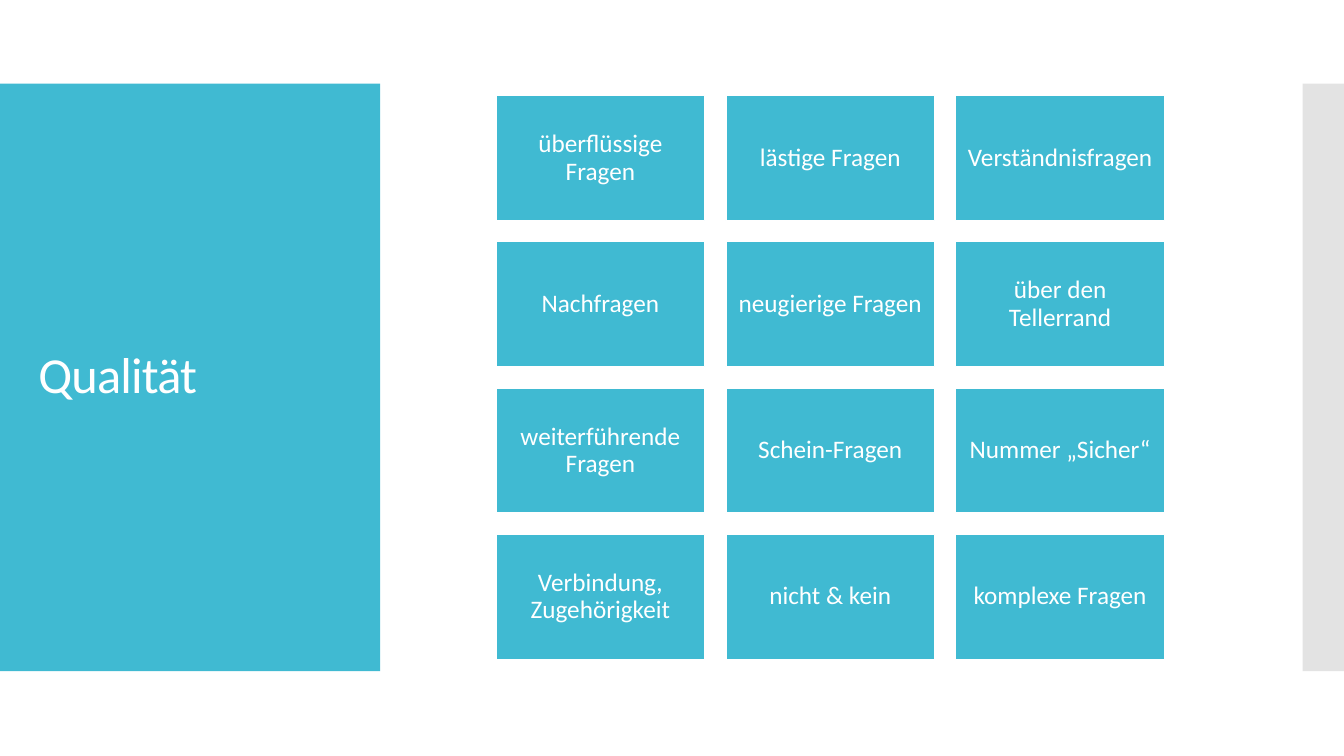
"""Build the slide "Qualität": a title panel beside a grid of question types."""
from lxml import etree
from pptx import Presentation
from pptx.dml.color import RGBColor
from pptx.enum.shapes import MSO_SHAPE
from pptx.enum.text import MSO_ANCHOR, PP_ALIGN
from pptx.oxml.ns import qn
from pptx.util import Inches, Pt

RECT = MSO_SHAPE.RECTANGLE
MIDDLE = MSO_ANCHOR.MIDDLE
LEFT, CENTER = PP_ALIGN.LEFT, PP_ALIGN.CENTER
TEAL, GREY, WHITE = "40BAD2", "C8C8C8", "FFFFFF"

ROWS = [
    ["überflüssige Fragen", "lästige Fragen", "Verständnisfragen"],
    ["Nachfragen", "neugierige Fragen", "über den Tellerrand"],
    ["weiterführende Fragen", "Schein-Fragen", "Nummer „Sicher“"],
    ["Verbindung, Zugehörigkeit", "nicht & kein", "komplexe Fragen"],
]

deck = Presentation()
deck.slide_width, deck.slide_height = Inches(13.33), Inches(7.5)
slide = deck.slides.add_slide(deck.slide_layouts[5])


def add_box(left, top, width, height, color):
    box = slide.shapes.add_shape(
        RECT, Inches(left), Inches(top), Inches(width), Inches(height))
    box.shadow.inherit = False
    box.fill.solid()
    box.fill.fore_color.rgb = RGBColor.from_string(color)
    box.line.fill.background()
    return box


def put_text(shape, text, size, align, inset, color=WHITE, face="Calibri"):
    frame = shape.text_frame
    frame.text = text
    frame.word_wrap = True
    frame.vertical_anchor = MIDDLE
    frame.margin_left = frame.margin_right = Inches(inset)
    frame.margin_top = frame.margin_bottom = Inches(inset)
    para = frame.paragraphs[0]
    para.alignment = align
    para.line_spacing = 0.9
    font = para.runs[0].font
    font.size, font.name = Pt(size), face
    font.color.rgb = RGBColor.from_string(color)
    return para.runs[0]


add_box(0, 0.83, 3.77, 5.83, TEAL)
strip = add_box(12.92, 0.83, 0.41, 5.83, GREY)
tint = strip.element.spPr.find(qn("a:solidFill"))[0]
etree.SubElement(tint, qn("a:alpha")).set("val", "50000")

title = slide.shapes.title
title.left, title.top = Inches(0.28), Inches(1.23)
title.width, title.height = Inches(3.22), Inches(5.03)
run = put_text(title, "Qualität", 36, LEFT, 0.1)
run.font._element.set("spc", "-60")
title.element.getparent().append(title.element)

for row, names in enumerate(ROWS):
    for col, name in enumerate(names):
        card = add_box(4.92 + 2.28 * col, 0.95 + 1.45 * row, 2.07, 1.24, TEAL)
        card.line.color.rgb = RGBColor.from_string(WHITE)
        card.line.width = Pt(0.85)
        put_text(card, name, 18, CENTER, 0.07)

deck.save("out.pptx")
